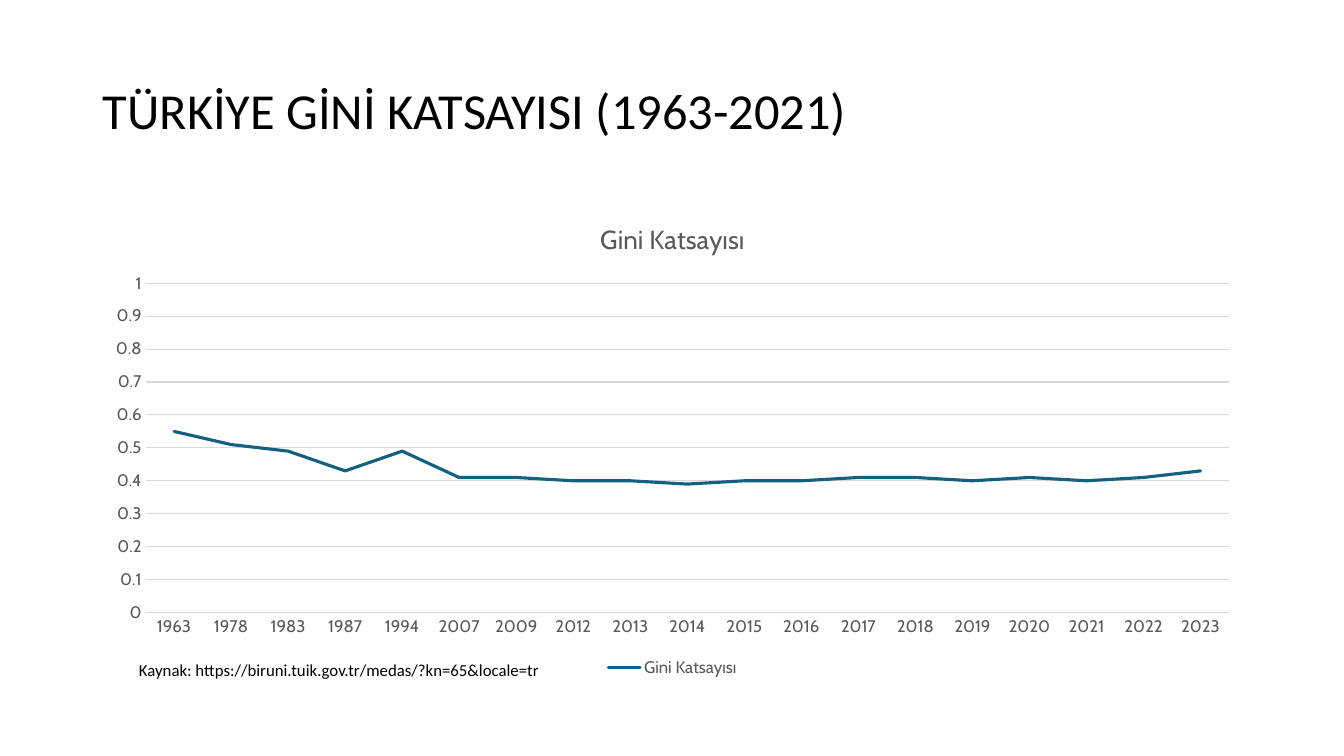
from lxml.etree import SubElement
from pptx import Presentation
from pptx.chart.data import CategoryChartData
from pptx.dml.color import RGBColor
from pptx.enum.chart import XL_CHART_TYPE, XL_LEGEND_POSITION, XL_MARKER_STYLE, XL_TICK_MARK
from pptx.enum.text import MSO_ANCHOR, MSO_AUTO_SIZE
from pptx.oxml.ns import qn
from pptx.util import Inches, Pt

SLIDE_W, SLIDE_H = 13.33, 7.5
MARGIN = 0.92
CONTENT_W = 11.5
BLACK, GREY, RULE, BLUE = "000000", "595959", "D9D9D9", "156082"
TEXT_FONT, CHART_FONT = "Calibri", "Cabin"

SERIES_NAME = "Gini Katsayısı"
GINI = {
    "1963": 0.55, "1978": 0.51, "1983": 0.49, "1987": 0.43, "1994": 0.49,
    "2007": 0.41, "2009": 0.41, "2012": 0.4, "2013": 0.4, "2014": 0.39,
    "2015": 0.4, "2016": 0.4, "2017": 0.41, "2018": 0.41, "2019": 0.4,
    "2020": 0.41, "2021": 0.4, "2022": 0.41, "2023": 0.43,
}


def color(hex_code):
    return RGBColor.from_string(hex_code)


def style_font(font, size, hex_code, name):
    font.size = Pt(size)
    font.bold = False
    font.name = name
    font.color.rgb = color(hex_code)


def style_line(line, hex_code, width):
    line.color.rgb = color(hex_code)
    line.width = Pt(width)


def write(frame, text, size=12, hex_code=BLACK, font=TEXT_FONT, spacing=None, anchor=None):
    frame.word_wrap = True
    if anchor is not None:
        frame.vertical_anchor = anchor
    paragraph = frame.paragraphs[0]
    if spacing:
        paragraph.line_spacing = spacing
    run = paragraph.add_run()
    run.text = text
    style_font(run.font, size, hex_code, font)


def add_heading(slide, box):
    heading = slide.shapes.title
    heading.left, heading.top, heading.width, heading.height = map(Inches, box)
    write(heading.text_frame, "TÜRKİYE GİNİ KATSAYISI (1963-2021)",
          size=36, spacing=0.9, anchor=MSO_ANCHOR.MIDDLE)
    heading.text_frame.paragraphs[0].alignment = 1  # left


def add_source(slide, box):
    source = slide.shapes.add_textbox(*map(Inches, box))
    write(source.text_frame, "Kaynak: https://biruni.tuik.gov.tr/medas/?kn=65&locale=tr")
    source.text_frame.auto_size = MSO_AUTO_SIZE.SHAPE_TO_FIT_TEXT


def add_gini_chart(slide, box):
    data = CategoryChartData()
    data.categories = list(GINI)
    data.add_series(SERIES_NAME, list(GINI.values()))
    chart = slide.shapes.add_chart(
        XL_CHART_TYPE.LINE_STACKED, *map(Inches, box), data).chart
    style_font(chart.font, 10, BLACK, CHART_FONT)

    # Chart title and legend
    chart.has_title = True
    write(chart.chart_title.text_frame, SERIES_NAME,
          size=18.6, hex_code=GREY, font=CHART_FONT)
    chart.chart_title.include_in_layout = False
    chart.has_legend = True
    chart.legend.position = XL_LEGEND_POSITION.BOTTOM
    chart.legend.include_in_layout = False
    style_font(chart.legend.font, 12, GREY, CHART_FONT)

    # Axes
    years, scale = chart.category_axis, chart.value_axis
    for axis in (years, scale):
        axis.major_tick_mark = axis.minor_tick_mark = XL_TICK_MARK.NONE
        style_font(axis.tick_labels.font, 12, GREY, CHART_FONT)
    style_line(years.format.line, RULE, 0.75)
    scale.format.line.fill.background()
    scale.minimum_scale, scale.maximum_scale, scale.major_unit = 0, 1, 0.1
    scale.has_major_gridlines = True
    style_line(scale.major_gridlines.format.line, RULE, 0.75)
    scale.tick_labels.number_format = "General"
    scale.tick_labels.number_format_is_linked = False

    # Gini line with rounded ends
    plot = chart.plots[0]
    plot.vary_by_categories = False
    gini = plot.series[0]
    gini.smooth = False
    gini.marker.style = XL_MARKER_STYLE.NONE
    style_line(gini.format.line, BLUE, 2.25)
    outline = gini.format.line.fill._xPr
    outline.set("cap", "rnd")
    SubElement(outline, qn("a:round"))


def build_gini_slide(deck):
    slide = deck.slides.add_slide(deck.slide_layouts[5])
    add_heading(slide, (MARGIN, 0.4, CONTENT_W, 1.45))
    add_source(slide, (1.28, 6.5, SLIDE_W / 2, 0.3))
    add_gini_chart(slide, (MARGIN, 2, CONTENT_W, 4.76))


def main():
    deck = Presentation()
    deck.slide_width, deck.slide_height = Inches(SLIDE_W), Inches(SLIDE_H)
    build_gini_slide(deck)
    deck.save("out.pptx")


if __name__ == "__main__":
    main()
